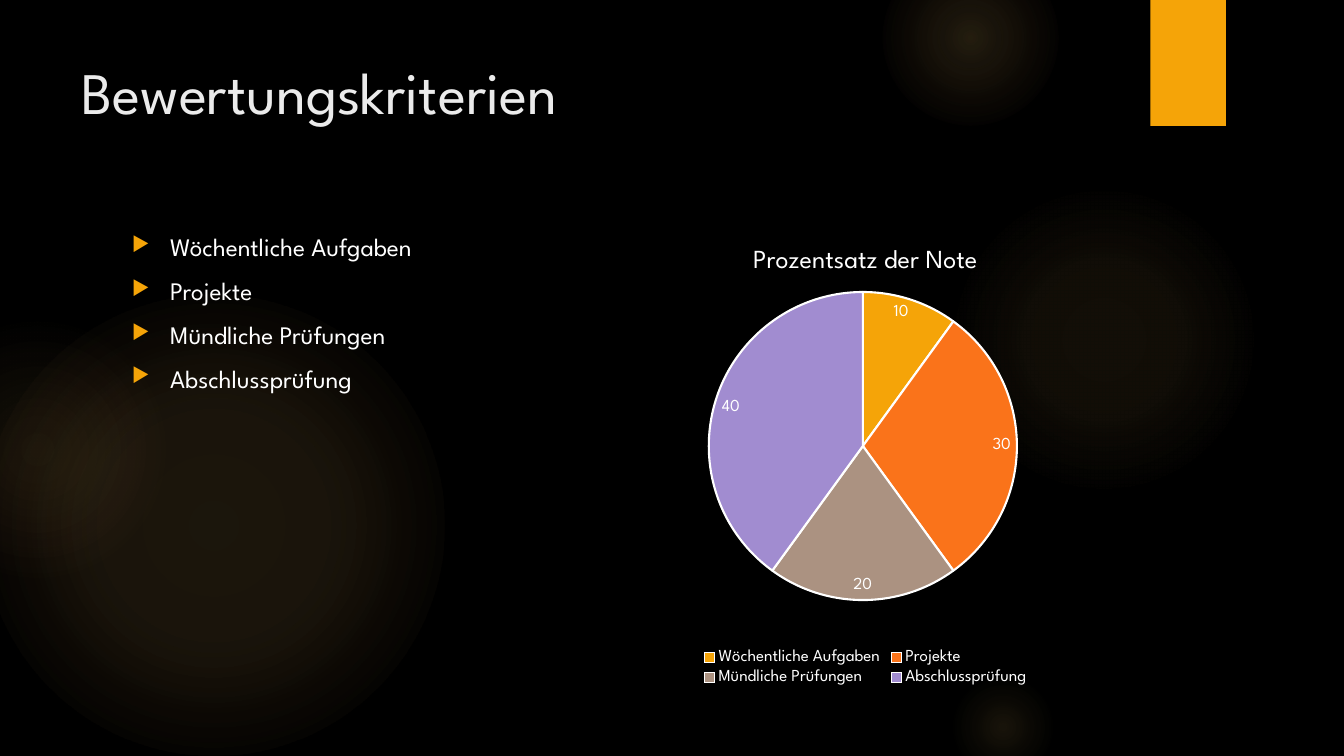
from lxml import etree
from pptx import Presentation
from pptx import util as u
from pptx.chart.data import CategoryChartData
from pptx.dml.color import RGBColor
from pptx.enum import chart as ch, shapes, text
from pptx.oxml import parse_xml
from pptx.oxml.ns import nsdecls, qn

FONT = "League Spartan"
AMBER, WHITE = "F5A408", "FFFFFF"
GLOW, ROSE = "FAC96A", "F59B74"
HEAD = "Prozentsatz der Note"
# name, share of the grade, slice colour
PARTS = [
    ("Wöchentliche Aufgaben", 10, AMBER),
    ("Projekte", 30, "FA731A"),
    ("Mündliche Prüfungen", 20, "AB9281"),
    ("Abschlussprüfung", 40, "A18CD0"),
]
# left, top, size, outer colour, (stop, opacity) in percent
GLOWS = [
    (-0.17, 2.92, 4.58, GLOW, [(0, 11), (36, 10), (75, 0)]),
    (-0.92, 3.17, 2.58, ROSE, [(0, 8), (36, 5), (71, 0)]),
    (9.41, 1.83, 3.08, GLOW, [(0, 7), (36, 6), (69, 0)]),
    (8.75, -0.5, 1.75, GLOW, [(0, 14), (36, 7), (73, 0)]),
    (9.41, 6.67, 1.08, GLOW, [(0, 10), (31, 5), (66, 0)]),
]


def color(code):
    return RGBColor.from_string(code)


def box(*sides):
    return [u.Inches(side) for side in sides]


class Deck:
    def __init__(self, slide):
        self.slide = slide
        fill = slide.background.fill
        fill.solid()
        fill.fore_color.rgb = color("000000")

    def style(self, font, size, code=WHITE):
        font.name, font.size, font.bold = FONT, u.Pt(size), False
        font.color.rgb = color(code)

    def shape(self, kind, *place):
        item = self.slide.shapes.add_shape(kind, *box(*place))
        item.shadow.inherit = False
        item.line.fill.background()
        return item

    def glow(self, left, top, size, edge, stops):
        """Add a disc that fades out from its centre."""
        disc = self.shape(shapes.MSO_SHAPE.OVAL, left, top, size, size)
        disc.fill.background()
        tones = [GLOW] * (len(stops) - 1) + [edge]
        marks = "".join(
            f'<a:gs pos="{pos * 1000}"><a:srgbClr val="{tone}">'
            f'<a:alpha val="{alpha * 1000}"/></a:srgbClr></a:gs>'
            for tone, (pos, alpha) in zip(tones, stops))
        grad = parse_xml(
            f'<a:gradFill {nsdecls("a")}><a:gsLst>{marks}</a:gsLst>'
            '<a:path path="circle"><a:fillToRect l="50000" t="50000" '
            'r="50000" b="50000"/></a:path></a:gradFill>')
        props = disc.element.spPr
        props.replace(props.find(qn("a:noFill")), grad)

    def block(self, code, *place):
        item = self.shape(shapes.MSO_SHAPE.RECTANGLE, *place)
        item.fill.solid()
        item.fill.fore_color.rgb = color(code)

    def words(self, lines, size, code, *place):
        frame = self.slide.shapes.add_textbox(*box(*place)).text_frame
        frame.word_wrap = True
        frame.vertical_anchor = text.MSO_ANCHOR.TOP
        frame.text = "\n".join(lines)
        for para in frame.paragraphs:
            self.style(para.font, size, code)
        return frame.paragraphs

    def bullets(self, lines, *place):
        for para in self.words(lines, 18, WHITE, *place):
            para.space_before, para.space_after = u.Pt(3.6), u.Pt(6)
            props = para._p.get_or_add_pPr()
            indent = u.Inches(0.38)
            props.set("marL", str(indent))
            props.set("indent", str(-indent))
            marks = parse_xml(
                f'<a:pPr {nsdecls("a")}><a:buClr><a:srgbClr val="{AMBER}"/>'
                '</a:buClr><a:buSzPct val="80000"/><a:buChar char="▶"/></a:pPr>')
            rest = props.find(qn("a:defRPr"))
            for mark in list(marks):
                rest.addprevious(mark)

    def pie(self, title, parts, *place):
        names, shares, codes = zip(*parts)
        data = CategoryChartData()
        data.categories = names
        data.add_series(title, shares)
        chart = self.slide.shapes.add_chart(
            ch.XL_CHART_TYPE.PIE, *box(*place), data).chart
        self.style(chart.font, 10)
        chart.has_title = True
        head = chart.chart_title.text_frame
        head.text = title
        self.style(head.paragraphs[0].font, 18.6)
        chart.has_legend = True
        chart.legend.position = ch.XL_LEGEND_POSITION.BOTTOM
        chart.legend.include_in_layout = False
        self.style(chart.legend.font, 12)
        plot = chart.plots[0]
        plot.vary_by_categories = True
        plot.has_data_labels = True
        labels = plot.data_labels
        labels.show_value, labels.show_percentage = True, False
        labels.position = ch.XL_LABEL_POSITION.INSIDE_END
        self.style(labels.font, 12)
        for spot, code in enumerate(codes):
            look = plot.series[0].points[spot].format
            look.fill.solid()
            look.fill.fore_color.rgb = color(code)
            look.line.color.rgb = color(WHITE)
            look.line.width = u.Pt(1.5)
        self.place(chart, x=0.176, y=0.141, w=0.637, h=0.666)

    def place(self, chart, **sides):
        """Fix the inner plot area, in fractions of the chart."""
        area = chart.element.chart.plotArea
        for old in area.findall(qn("c:layout")):
            area.remove(old)
        layout = etree.Element(qn("c:layout"))
        manual = etree.SubElement(layout, qn("c:manualLayout"))
        values = {"layoutTarget": "inner", "xMode": "edge", "yMode": "edge", **sides}
        for name, value in values.items():
            etree.SubElement(manual, qn(f"c:{name}")).set("val", str(value))
        area.insert(0, layout)


def main():
    show = Presentation()
    show.slide_width, show.slide_height = box(13.33, 7.5)
    deck = Deck(show.slides.add_slide(show.slide_layouts[6]))
    for glow in GLOWS:
        deck.glow(*glow)
    deck.block(AMBER, 11.41, 0, 0.75, 1.25)
    deck.words(["Bewertungskriterien"], 42, "EBEBEB", 0.71, 0.5, 10.29, 1.53)
    top, width, height = 2.25, 4.81, 4.59
    deck.bullets([part[0] for part in PARTS], 1.21, top, width, height)
    deck.pie(HEAD, PARTS, 6.18, top, width, height)
    show.save("out.pptx")


if __name__ == "__main__":
    main()
